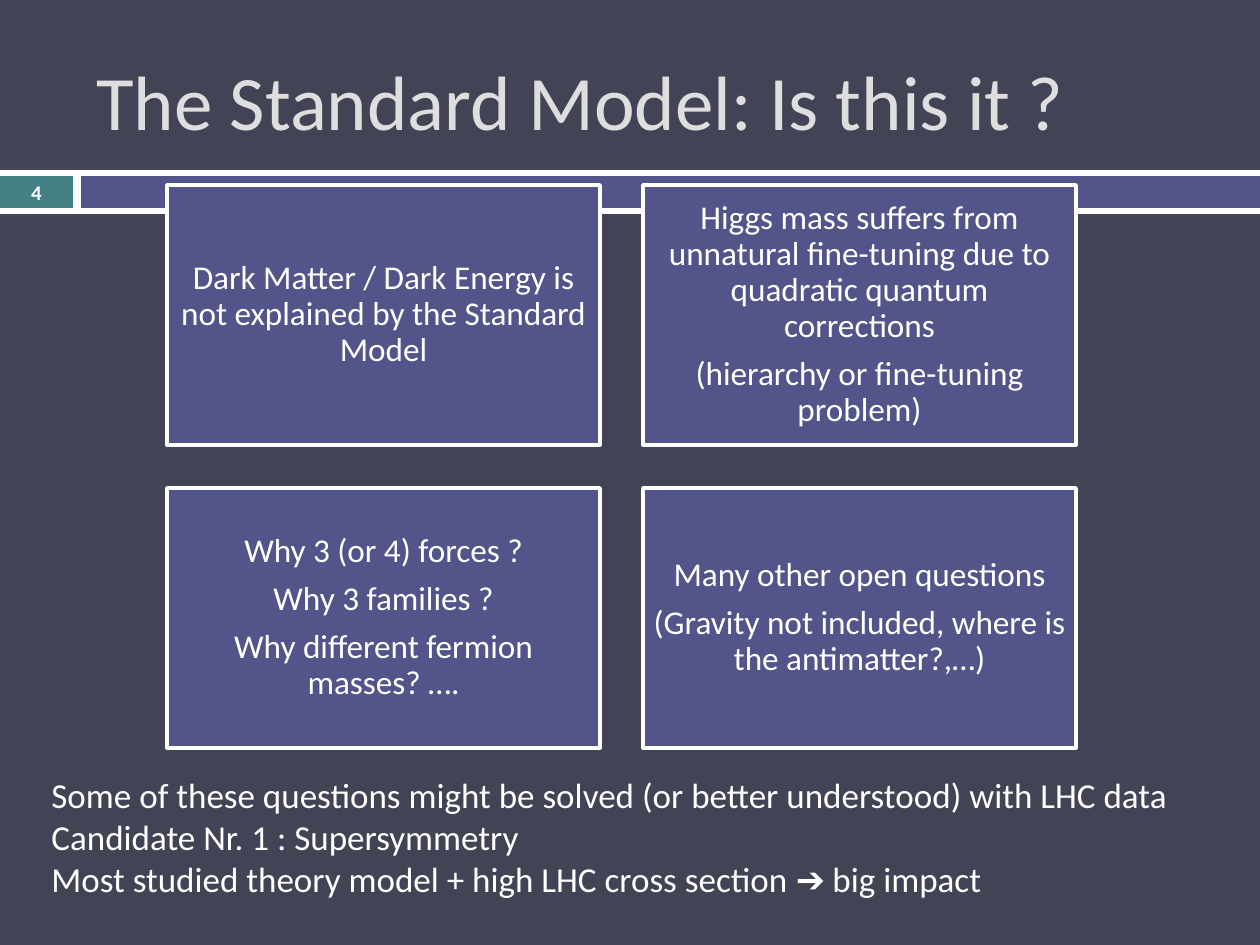
from pptx import Presentation
from pptx.dml.color import RGBColor
from pptx.enum.shapes import MSO_SHAPE
from pptx.enum.text import MSO_ANCHOR, PP_ALIGN
from pptx.util import Emu, Pt

RECTANGLE = MSO_SHAPE.RECTANGLE
TOP, MIDDLE = MSO_ANCHOR.TOP, MSO_ANCHOR.MIDDLE
LEFT, CENTER = PP_ALIGN.LEFT, PP_ALIGN.CENTER

SLATE = RGBColor(0x42, 0x44, 0x56)
WHITE = RGBColor(0xFF, 0xFF, 0xFF)
TEAL = RGBColor(0x43, 0x80, 0x86)
VIOLET = RGBColor(0x53, 0x54, 0x8A)
PALE = RGBColor(0xDE, 0xDE, 0xDE)
FONT = "Calibri"

# Content
TITLE = "The Standard Model: Is this it ?"
PAGE_NUMBER = "4"
QUESTIONS = [
    ["Dark Matter / Dark Energy is not explained by the Standard Model"],
    ["Higgs mass suffers from unnatural fine-tuning due to quadratic quantum corrections",
     "(hierarchy or fine-tuning problem)"],
    ["Why 3 (or 4) forces ?", "Why 3 families ?", "Why different fermion masses? …."],
    ["Many other open questions", "(Gravity not included, where is the antimatter?,…)"],
]
OUTLOOK = [
    "Some of these questions might be solved (or better understood) with LHC data",
    "Candidate Nr. 1 : Supersymmetry",
    "Most studied theory model + high LHC cross section ➔ big impact",
]

# Layout in px, 126 to the inch
PAGE_WIDTH, PAGE_HEIGHT = 1260, 945
BANDS = [
    (0, 170, PAGE_WIDTH, 44, WHITE),
    (0, 176, 73, 32, TEAL),
    (81, 176, PAGE_WIDTH - 81, 32, VIOLET),
]
GRID_LEFT, GRID_TOP, COLUMNS = 167, 185, 2
CARD_WIDTH, CARD_HEIGHT, GAP = 433, 260, 43
CARD_INSET = 10


def px(length):
    return Emu(round(length * 914400 / 126))


def add_rectangle(page, left, top, width, height, fill):
    box = page.shapes.add_shape(RECTANGLE, px(left), px(top), px(width), px(height))
    box.shadow.inherit = False
    box.fill.solid()
    box.fill.fore_color.rgb = fill
    box.line.fill.background()
    return box


def add_text_box(page, left, top, width, height):
    return page.shapes.add_textbox(px(left), px(top), px(width), px(height))


def write(box, lines, size, color=WHITE, align=LEFT, anchor=TOP, bold=False,
          line_spacing=None, gap=None):
    frame = box.text_frame
    frame.word_wrap = True
    frame.vertical_anchor = anchor
    for index, line in enumerate(lines):
        para = frame.add_paragraph() if index else frame.paragraphs[0]
        para.alignment = align
        para.line_spacing = line_spacing
        para.space_after = gap
        span = para.add_run()
        span.text = line
        span.font.name = FONT
        span.font.size = Pt(size)
        span.font.bold = bold
        span.font.color.rgb = color


deck = Presentation()
deck.slide_width, deck.slide_height = px(PAGE_WIDTH), px(PAGE_HEIGHT)
page = deck.slides.add_slide(deck.slide_layouts[6])
page.background.fill.solid()
page.background.fill.fore_color.rgb = SLATE

# Bands under the title
for band in BANDS:
    add_rectangle(page, *band)

# Title, page number and outlook
write(add_text_box(page, 84, 32, 1124, 136), [TITLE], 44, PALE, anchor=MIDDLE)
write(add_text_box(page, 0, 175, 73, 34), [PAGE_NUMBER], 11.9,
      align=CENTER, anchor=MIDDLE, bold=True)
write(add_text_box(page, 39, 767, 1142, 140), OUTLOOK, 20)

# Grid of open questions
for index, lines in enumerate(QUESTIONS):
    row, column = divmod(index, COLUMNS)
    card = add_rectangle(page, GRID_LEFT + column * (CARD_WIDTH + GAP),
                         GRID_TOP + row * (CARD_HEIGHT + GAP),
                         CARD_WIDTH, CARD_HEIGHT, VIOLET)
    card.line.color.rgb = WHITE
    card.line.width = Pt(2)
    frame = card.text_frame
    frame.margin_left = frame.margin_right = px(CARD_INSET)
    frame.margin_top = frame.margin_bottom = px(CARD_INSET)
    write(card, lines, 19, align=CENTER, anchor=MIDDLE, line_spacing=0.9, gap=Pt(7))

deck.save("out.pptx")
